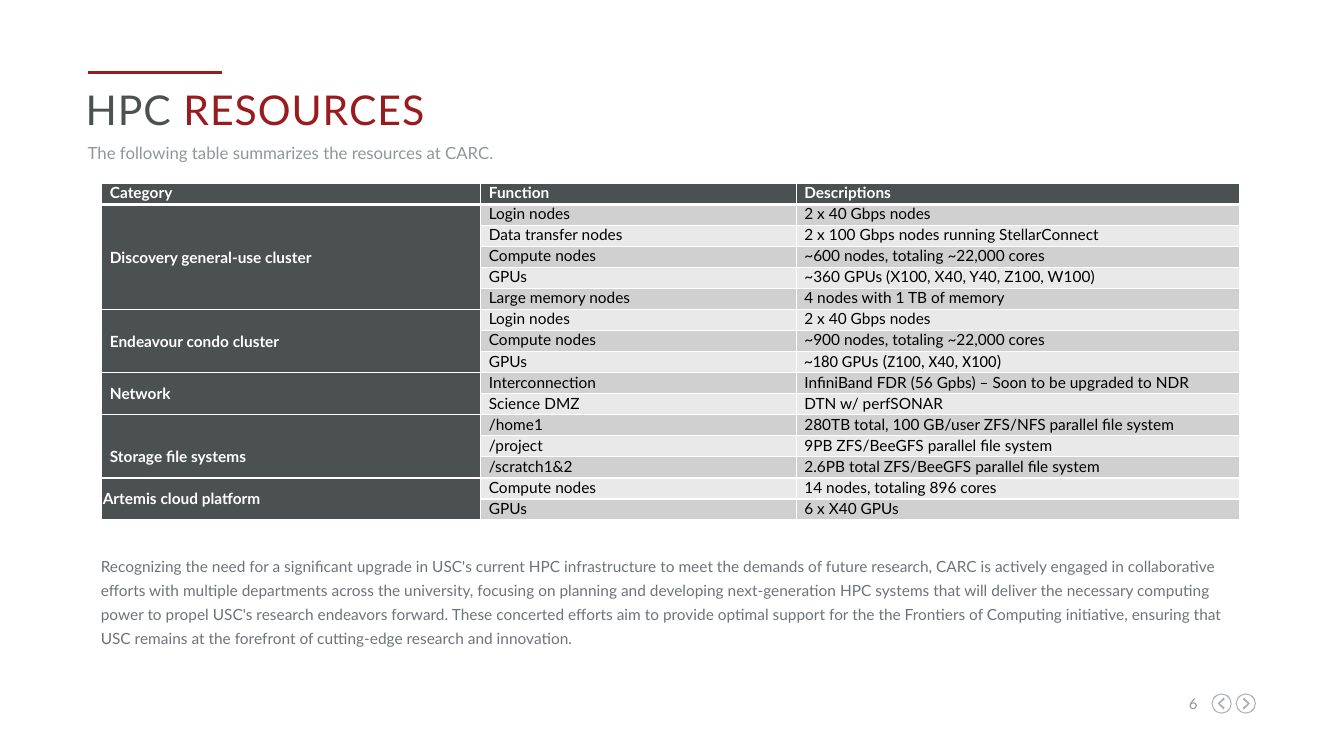
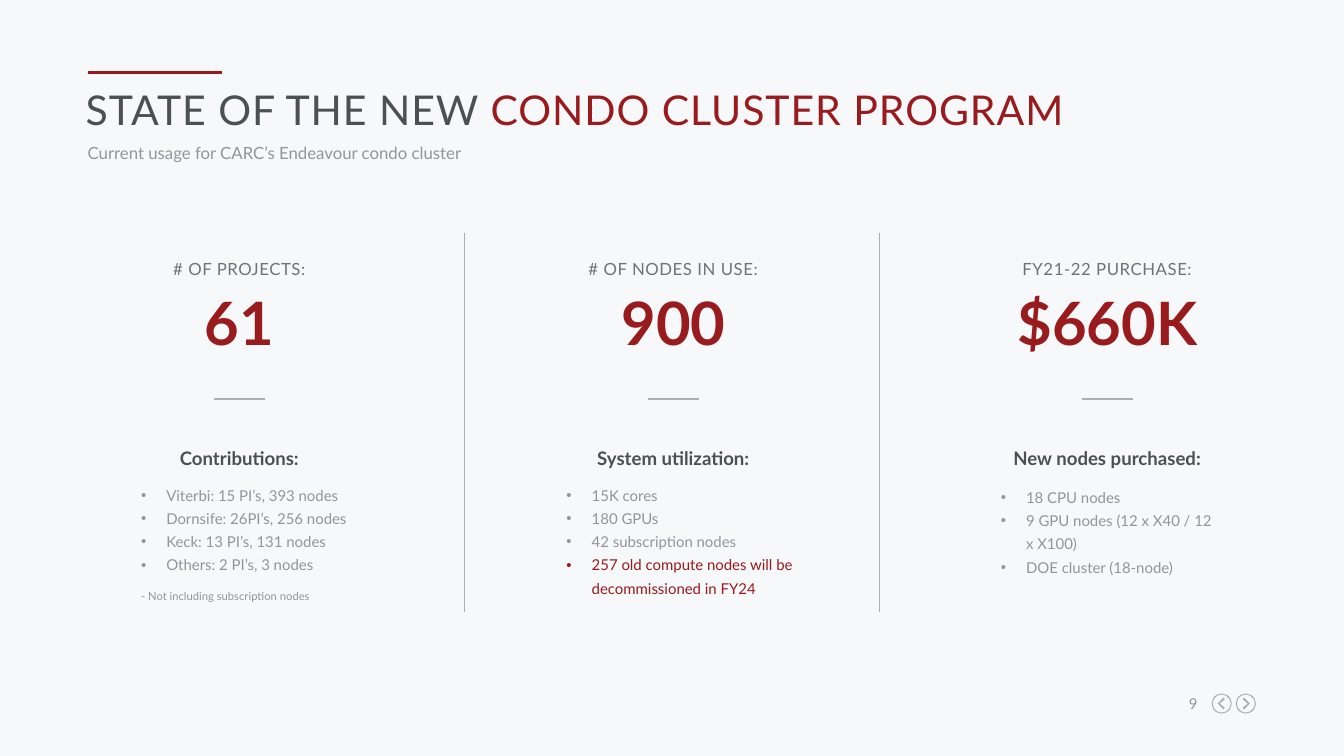
from dataclasses import dataclass

from lxml.etree import SubElement
from pptx import Presentation
from pptx.dml.color import RGBColor
from pptx.enum.shapes import MSO_CONNECTOR
from pptx.enum.text import MSO_ANCHOR, PP_ALIGN
from pptx.oxml.ns import qn
from pptx.util import Inches, Pt


@dataclass
class Style:
    size: float
    color: str
    bold: bool = False
    track: float = 0
    line: object = None
    before: float = 0
    bullet: bool = False
    font: str = "Lato"


class Theme:
    red, dark, mid, gray, rule = "991B1E", "4B5050", "6E7378", "91969B", "AAAFB4"
    white, pale, black = "FFFFFF", "F6F8FA", "000000"
    bands = ("E9E9E9", "D0D0D0")
    title = Style(29.3, dark, track=0.7)
    title_accent = Style(29.3, red, track=0.7)
    subtitle = Style(12, gray, line=Pt(16))
    page = Style(10.7, gray, track=0.4)
    body = Style(11, mid, line=1.3)
    head = Style(11, white, bold=True)
    cell = Style(11, black)
    cell_alt = Style(12, black, font="Calibri")
    label = Style(12, mid, track=0.4)
    figure = Style(42.7, red, bold=True)
    heading = Style(13.3, dark, bold=True)
    bullet = Style(10.7, gray, line=1.3, bullet=True)
    bullet_accent = Style(10.7, red, line=1.3, bullet=True)
    note = Style(8, gray, line=1.3, before=8)


def write(tf, paragraphs, align=PP_ALIGN.LEFT):
    for i, runs in enumerate(paragraphs):
        p = tf.paragraphs[0] if i == 0 else tf.add_paragraph()
        p.alignment = align
        first = runs[0][1]
        if first.line:
            p.line_spacing = first.line
        if first.before:
            p.space_before = Pt(first.before)
        if first.bullet:
            pPr = p._p.get_or_add_pPr()
            pPr.set("marL", str(Inches(0.25)))
            pPr.set("indent", str(-Inches(0.25)))
            SubElement(pPr, qn("a:buFont")).set("typeface", "Arial")
            SubElement(pPr, qn("a:buChar")).set("char", "•")
        for text, style in runs:
            r = p.add_run()
            r.text = text
            r.font.size = Pt(style.size)
            r.font.name = style.font
            r.font.bold = style.bold
            r.font.color.rgb = RGBColor.from_string(style.color)
            if style.track:
                r._r.get_or_add_rPr().set("spc", str(round(style.track * 100)))


def add_line(s, x1, y1, x2, y2, color, width):
    sp = s.shapes.add_connector(MSO_CONNECTOR.STRAIGHT, Inches(x1), Inches(y1), Inches(x2), Inches(y2))
    sp.line.color.rgb = RGBColor.from_string(color)
    sp.line.width = Pt(width)
    SubElement(sp._element.spPr, qn("a:effectLst"))


summary = (
    "Recognizing the need for a significant upgrade in USC's current HPC infrastructure to meet the demands of "
    "future research, CARC is actively engaged in collaborative efforts with multiple departments across the "
    "university, focusing on planning and developing next-generation HPC systems that will deliver the necessary "
    "computing power to propel USC's research endeavors forward. These concerted efforts aim to provide optimal "
    "support for the the Frontiers of Computing initiative, ensuring that USC remains at the forefront of "
    "cutting-edge research and innovation."
)

stats = [
    ("# OF PROJECTS:", "61", "Contributions:", (1.4, 4.77, 2.1, 1.2), [
        ("Viterbi: 15 PI’s, 393 nodes", Theme.bullet),
        ("Dornsife: 26PI’s, 256 nodes", Theme.bullet),
        ("Keck: 13 PI’s, 131 nodes", Theme.bullet),
        ("Others: 2 PI’s, 3 nodes", Theme.bullet),
        ("- Not including subscription nodes", Theme.note),
    ]),
    ("# OF NODES IN USE:", "900", "System utilization:", (5.62, 4.77, 2.52, 1.14), [
        ("15K cores", Theme.bullet),
        ("180 GPUs", Theme.bullet),
        ("42 subscription nodes", Theme.bullet),
        ("257 old compute nodes will be decommissioned in FY24", Theme.bullet_accent),
    ]),
    ("FY21-22 PURCHASE:", "$660K", "New nodes purchased:", (9.93, 4.79, 2.1, 0.91), [
        ("18 CPU nodes", Theme.bullet),
        ("9 GPU nodes (12 x X40 / 12 x X100)", Theme.bullet),
        ("DOE cluster (18-node)", Theme.bullet),
    ]),
]

stat_texts = []
stat_lines = [(x, 2.31, x, 6.07, Theme.rule, 0.75) for x in (4.61, 8.73)]
for i, (label, figure, heading, box, items) in enumerate(stats):
    left = 1.15 + 8.61 * i / 2
    for top, height, text, style in (
        (2.57, 0.2, label, Theme.label),
        (2.83, 0.72, figure, Theme.figure),
        (4.43, 0.22, heading, Theme.heading),
    ):
        stat_texts.append(((left, top, 2.45, height), [[(text, style)]], PP_ALIGN.CENTER))
    stat_texts.append((box, [[item] for item in items], PP_ALIGN.LEFT))
    stat_lines.append((left + 0.97, 3.96, left + 1.48, 3.96, Theme.rule, 1))

pages = [
    ("6", Theme.white, "HPC ", "RESOURCES", "The following table summarizes the resources at CARC.",
     [((1, 5.47, 11.29, 0.94), [[(summary, Theme.body)]], PP_ALIGN.LEFT)], []),
    ("9", Theme.pale, "STATE OF THE NEW ", "CONDO CLUSTER PROGRAM",
     "Current usage for CARC’s Endeavour condo cluster", stat_texts, stat_lines),
]

prs = Presentation()
prs.slide_width, prs.slide_height = Inches(40 / 3), Inches(7.5)

for number, background, lead, accent, subtitle, texts, lines in pages:
    s = prs.slides.add_slide(prs.slide_layouts[6])
    s.background.fill.solid()
    s.background.fill.fore_color.rgb = RGBColor.from_string(background)

    for line in [(0.87, 0.72, 2.2, 0.72, Theme.red, 2.25)] + lines:
        add_line(s, *line)

    shared = [
        ((11.58, 6.89, 0.3, 0.18), [[(number, Theme.page)]], PP_ALIGN.RIGHT),
        ((0.85, 0.84, 11.6, 0.56), [[(lead, Theme.title), (accent, Theme.title_accent)]], PP_ALIGN.LEFT),
        ((0.87, 1.39, 11.6, 0.21), [[(subtitle, Theme.subtitle)]], PP_ALIGN.LEFT),
    ]
    for box, paragraphs, align in shared + texts:
        tf = s.shapes.add_textbox(*map(Inches, box)).text_frame
        tf.word_wrap = True
        tf.margin_left = tf.margin_top = tf.margin_right = tf.margin_bottom = 0
        write(tf, paragraphs, align)

    for cx, direction in ((12.36, 1), (12.12, -1)):
        radii = (0.1, 0.09)
        rings = [[(a, 0), (0, a), (-a, 0), (0, -a), (a, 0)] for a in radii]
        chevron = [(-0.03, -0.04), (0.02, 0), (-0.03, 0.04), (-0.02, 0.06), (0.04, 0), (-0.02, -0.06)]
        contours = [
            [(Inches(cx + direction * x), Inches(6.98 + y)) for x, y in contour]
            for contour in rings + [chevron]
        ]
        builder = s.shapes.build_freeform(*contours[0][0])
        for i, contour in enumerate(contours):
            if i:
                builder.move_to(*contour[0])
            builder.add_line_segments(contour[1:], close=True)
        sp = builder.convert_to_shape()
        segments = list(sp._element.iter(qn("a:lnTo")))
        for k, segment in enumerate(segments[:8]):
            radius = str(Inches(radii[k // 4]))
            quarter = k % 4
            start = 90 * quarter if direction == 1 else (180 - 90 * quarter) % 360
            arc = SubElement(segment.getparent(), qn("a:arcTo"), wR=radius, hR=radius,
                             stAng=str(start * 60000), swAng=str(direction * 90 * 60000))
            segment.getparent().replace(segment, arc)
        sp.shadow.inherit = False
        sp.fill.solid()
        sp.fill.fore_color.rgb = RGBColor.from_string(Theme.rule)
        sp.line.fill.background()

resources = [
    ("Discovery general-use cluster", [
        ("Login nodes", "2 x 40 Gbps nodes"),
        ("Data transfer nodes", "2 x 100 Gbps nodes running StellarConnect"),
        ("Compute nodes", "~600 nodes, totaling ~22,000 cores"),
        ("GPUs", "~360 GPUs (X100, X40, Y40, Z100, W100)"),
        ("Large memory nodes", "4 nodes with 1 TB of memory"),
    ]),
    ("Endeavour condo cluster", [
        ("Login nodes", "2 x 40 Gbps nodes"),
        ("Compute nodes", "~900 nodes, totaling ~22,000 cores"),
        ("GPUs", "~180 GPUs (Z100, X40, X100)"),
    ]),
    ("Network", [
        ("Interconnection", "InfiniBand FDR (56 Gpbs) – Soon to be upgraded to NDR"),
        ("Science DMZ", "DTN w/ perfSONAR"),
    ]),
    ("Storage file systems", [
        ("/home1", "280TB total, 100 GB/user ZFS/NFS parallel file system"),
        ("/project", "9PB ZFS/BeeGFS parallel file system"),
        ("/scratch1&2", "2.6PB total ZFS/BeeGFS parallel file system"),
    ]),
    ("Artemis cloud platform", [
        ("Compute nodes", "14 nodes, totaling 896 cores"),
        ("GPUs", "6 x X40 GPUs"),
    ]),
]
rows = [("Category", "Function", "Descriptions")]
spans = []
for category, entries in resources:
    spans.append((len(rows), len(rows) + len(entries) - 1))
    for i, entry in enumerate(entries):
        rows.append((category if i == 0 else "",) + entry)

table = prs.slides[0].shapes.add_table(
    len(rows), 3, Inches(1.01), Inches(1.82), Inches(11.29), Inches(3.34)).table
table.horz_banding = False
for column, width in zip(table.columns, (3.76, 3.13, 4.4)):
    column.width = Inches(width)
for row in table.rows:
    row.height = Inches(3.34 / len(rows))

for i, values in enumerate(rows):
    for j, text in enumerate(values):
        cell = table.cell(i, j)
        cell.margin_left = cell.margin_right = Inches(0.08)
        cell.margin_top = cell.margin_bottom = 0
        is_head = i == 0 or j == 0
        tcPr = cell._tc.get_or_add_tcPr()
        for side in "LRTB":
            thick = (i, side) in ((0, "B"), (1, "T"))
            ln = SubElement(tcPr, qn(f"a:ln{side}"), w=str(Pt(3 if thick else 1)))
            SubElement(SubElement(ln, qn("a:solidFill")), qn("a:srgbClr"), val=Theme.white)
        cell.fill.solid()
        cell.fill.fore_color.rgb = RGBColor.from_string(Theme.dark if is_head else Theme.bands[i % 2])
        style = Theme.head if is_head else Theme.cell
        if text.startswith("~180"):
            style = Theme.cell_alt
        if text:
            write(cell.text_frame, [[(text, style)]])

for first, last in spans:
    cell = table.cell(first, 0)
    cell.merge(table.cell(last, 0))
    cell.vertical_anchor = MSO_ANCHOR.MIDDLE
    if rows[first][0].startswith("Storage"):
        cell.margin_top = Inches(0.2)
    if rows[first][0].startswith("Artemis"):
        cell.margin_left = Inches(0.01)

prs.save("out.pptx")
